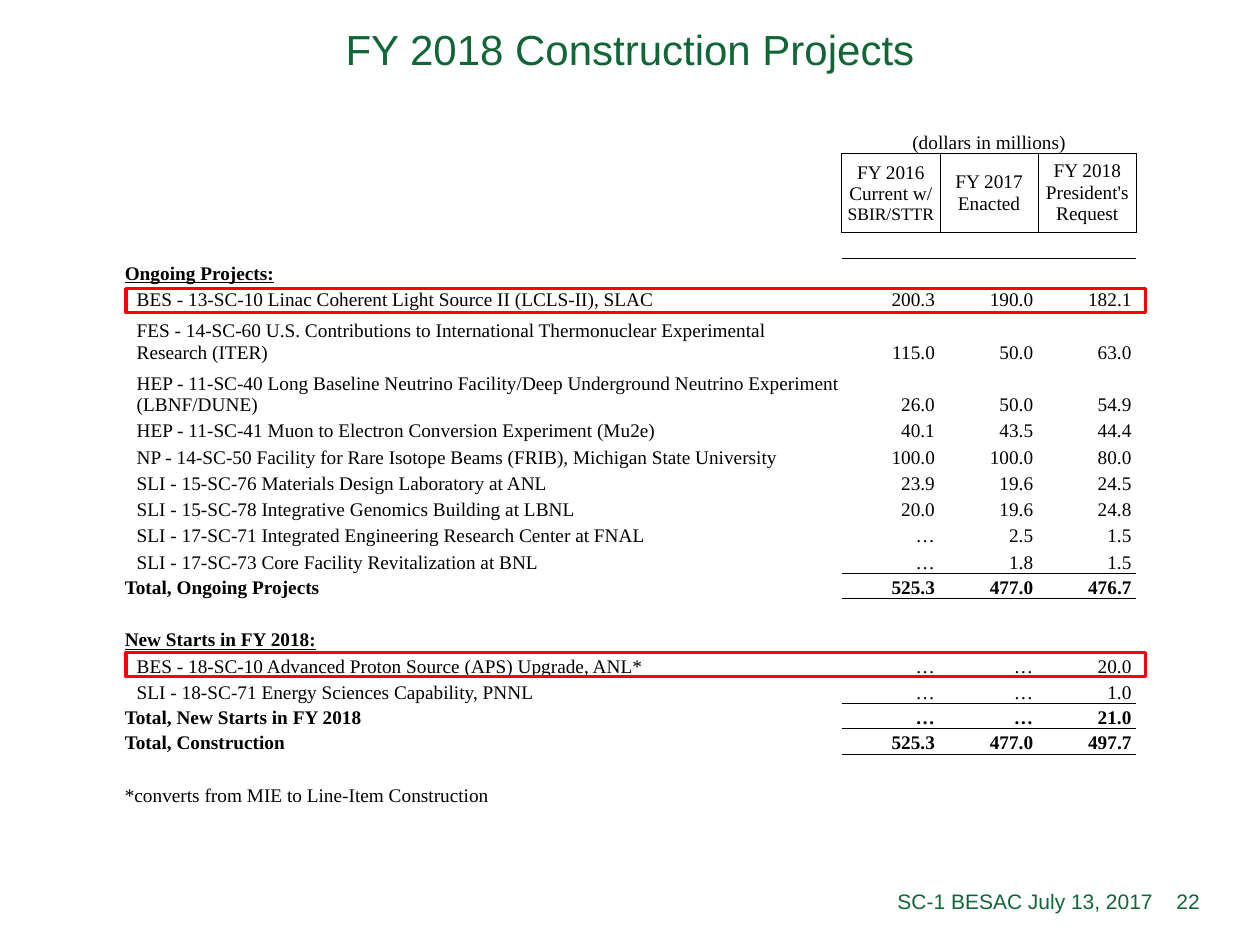
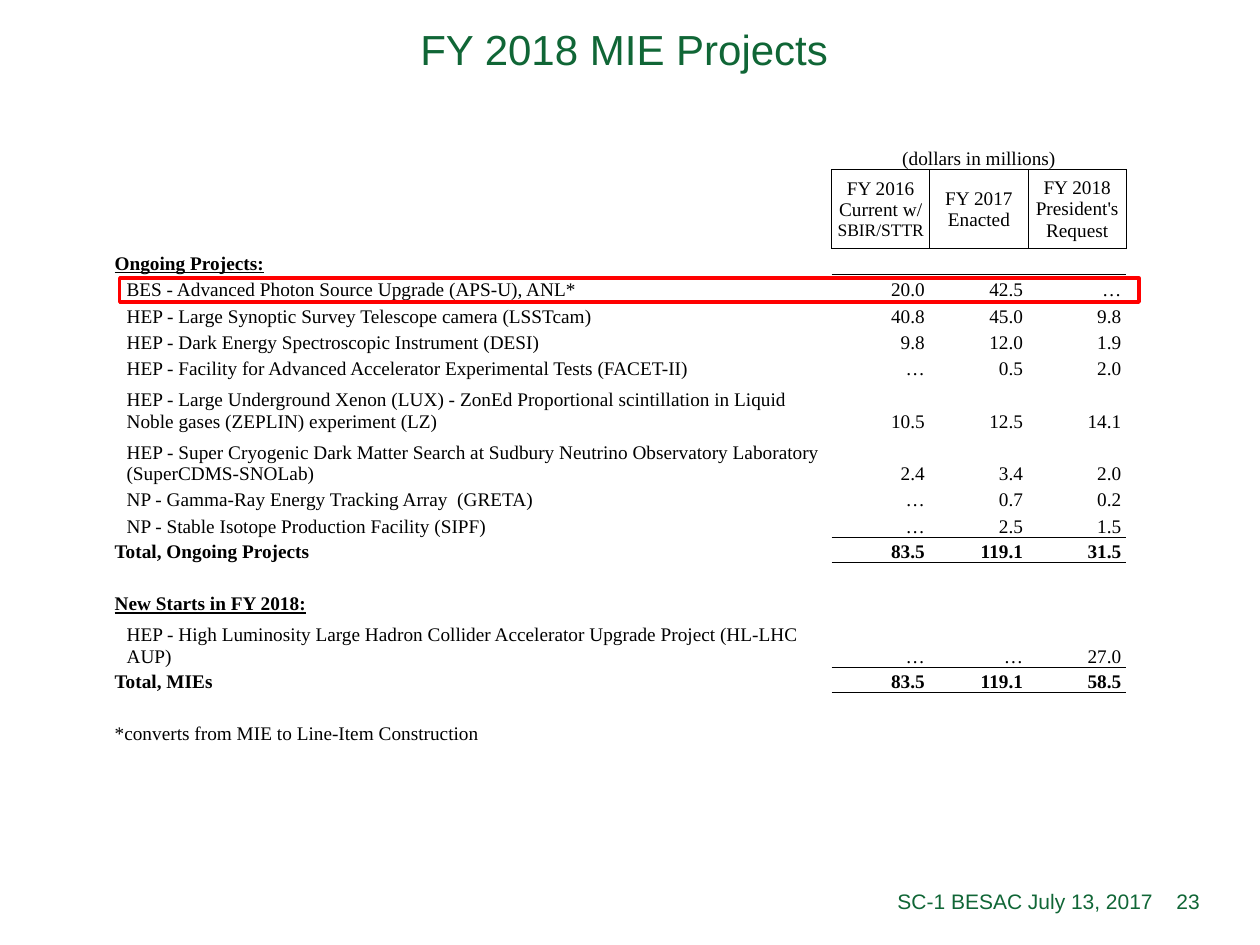
from dataclasses import dataclass

import lxml.etree
import pptx
import pptx.dml.color
import pptx.enum.shapes
import pptx.enum.text
import pptx.oxml.ns
import pptx.util

ALIGN = pptx.enum.text.PP_ALIGN
ANCHOR = pptx.enum.text.MSO_ANCHOR


@dataclass(frozen=True)
class Theme:
    green: str = "106636"
    black: str = "000000"
    red: str = "FF0000"
    sans: str = "Arial"
    serif: str = "Times New Roman"
    title_size: int = 24
    footer_size: int = 12
    table_size: int = 11
    small_size: int = 10
    rule_width: float = 0.5
    highlight_width: float = 2
    table_style: str = "{2D5ABB26-0587-4C30-8999-92F81FD0307C}"


class Report:
    GRID_COLUMNS = 100
    GRID_ROWS = 36
    LABEL_COLUMNS = 56.9
    VALUE_COLUMNS = 7.8
    TOTAL_ROWS = 0.96

    def __init__(self, theme):
        self.theme = theme
        self.deck = pptx.Presentation()
        self.deck.slide_width = pptx.util.Inches(10)
        self.deck.slide_height = pptx.util.Inches(7.5)
        self.page = None

    def across(self, columns):
        return round(self.deck.slide_width * columns / self.GRID_COLUMNS)

    def down(self, rows):
        return round(self.deck.slide_height * rows / self.GRID_ROWS)

    def place(self, left, top, width, height):
        return self.across(left), self.down(top), self.across(width), self.down(height)

    def style(self, para, name, size, color, align, bold=False, underline=False):
        para.alignment = align
        font = para.font
        font.name = name
        font.size = pptx.util.Pt(size)
        font.color.rgb = pptx.dml.color.RGBColor.from_string(color)
        font.bold = bold
        font.underline = underline

    def add_text(self, text, area, size, align):
        box = self.page.shapes.add_textbox(*self.place(*area))
        frame = box.text_frame
        frame.word_wrap = True
        frame.vertical_anchor = ANCHOR.MIDDLE
        para = frame.paragraphs[0]
        para.text = text
        self.style(para, self.theme.sans, size, self.theme.green, align)

    def add_page(self, title, number):
        self.page = self.deck.slides.add_slide(self.deck.slide_layouts[6])
        theme = self.theme
        self.add_text(title, (0, -1.15, 100, 6), theme.title_size, ALIGN.CENTER)
        self.add_text(str(number), (92, 33.36, 4.2, 1.92), theme.footer_size, ALIGN.RIGHT)
        self.add_text("SC-1 BESAC July 13, 2017", (34.2, 33.36, 58.3, 1.92),
                      theme.footer_size, ALIGN.RIGHT)

    def add_highlight(self, left, top):
        box = self.page.shapes.add_shape(
            pptx.enum.shapes.MSO_SHAPE.RECTANGLE, *self.place(left, top, 80.9, 0.91))
        box.shadow.inherit = False
        box.fill.background()
        box.line.color.rgb = pptx.dml.color.RGBColor.from_string(self.theme.red)
        box.line.width = pptx.util.Pt(self.theme.highlight_width)

    def add_borders(self, cell, sides):
        properties = cell._tc.get_or_add_tcPr()
        qualify = pptx.oxml.ns.qn
        for side in sides:
            line = lxml.etree.SubElement(properties, qualify(f"a:ln{side}"),
                                         w=str(pptx.util.Pt(self.theme.rule_width)))
            fill = lxml.etree.SubElement(line, qualify("a:solidFill"))
            lxml.etree.SubElement(fill, qualify("a:srgbClr"), val=self.theme.black)

    def fill_cell(self, cell, text="", align=ALIGN.LEFT, anchor=ANCHOR.BOTTOM,
                  indent=0, end=0, borders="", **emphasis):
        cell.margin_left = self.across(indent)
        cell.margin_right = self.across(end)
        cell.margin_top = cell.margin_bottom = 0
        cell.vertical_anchor = anchor
        self.add_borders(cell, borders)
        cell.fill.background()
        para = cell.text_frame.paragraphs[0]
        theme = self.theme
        if text:
            para.text = text
        else:
            para._p.get_or_add_endParaRPr().set("sz", str(theme.table_size * 100))
        self.style(para, theme.serif, theme.table_size, theme.black, align, **emphasis)

    def add_header(self, table):
        for cell in table.rows[0].cells:
            self.fill_cell(cell)
        units = table.cell(0, 1)
        units.merge(table.cell(0, 3))
        self.fill_cell(units, "(dollars in millions)", ALIGN.CENTER)
        self.fill_cell(table.cell(1, 0))
        years = ("FY 2016\nCurrent w/ ", "FY 2017 Enacted", "FY 2018 President's Request")
        for column, year in enumerate(years, 1):
            self.fill_cell(table.cell(1, column), year, ALIGN.CENTER, ANCHOR.MIDDLE,
                           borders="LRTB")
        span = table.cell(1, 1).text_frame.paragraphs[0].add_run()
        span.text = "SBIR/STTR"
        span.font.size = pptx.util.Pt(theme_size := self.theme.small_size)

    def add_budget(self, left, top, entries):
        heights = [1, 3] + [self.TOTAL_ROWS if kind == "total" else 2 if kind == "tall" else 1
                            for kind, *_ in entries]
        widths = [self.LABEL_COLUMNS] + [self.VALUE_COLUMNS] * 3
        frame = self.page.shapes.add_table(
            len(heights), len(widths), *self.place(left, top, sum(widths), sum(heights)))
        table = frame.table
        table.first_row = table.horz_banding = False
        table._tbl.tblPr.find(pptx.oxml.ns.qn("a:tableStyleId")).text = self.theme.table_style
        for column, width in zip(table.columns, widths):
            column.width = self.across(width)
        for row, height in zip(table.rows, heights):
            row.height = self.down(height)
        self.add_header(table)
        for row, (kind, label, *values) in enumerate(entries, 2):
            strong = kind in ("heading", "total")
            self.fill_cell(table.cell(row, 0), label,
                           indent=0.95 if kind in ("item", "tall") else 0,
                           bold=strong, underline=kind == "heading")
            for column, value in enumerate(values or [""] * 3, 1):
                self.fill_cell(table.cell(row, column), value, ALIGN.RIGHT, end=0.4,
                               borders="T" if kind == "total" or row == 2 else "",
                               bold=strong)


BLANK = ("blank", "")
ONGOING = ("heading", "Ongoing Projects:")
NEW_STARTS = ("heading", "New Starts in FY 2018:")
FOOTNOTE = ("note", "*converts from MIE to Line-Item Construction")

CONSTRUCTION = [
    BLANK,
    ONGOING,
    ("item", "BES - 13-SC-10 Linac Coherent Light Source II (LCLS-II), SLAC",
     "200.3", "190.0", "182.1"),
    ("tall", "FES - 14-SC-60 U.S. Contributions to International Thermonuclear Experimental "
     "Research (ITER)", "115.0", "50.0", "63.0"),
    ("tall", "HEP - 11-SC-40 Long Baseline Neutrino Facility/Deep Underground Neutrino "
     "Experiment (LBNF/DUNE)", "26.0", "50.0", "54.9"),
    ("item", "HEP - 11-SC-41 Muon to Electron Conversion Experiment (Mu2e)",
     "40.1", "43.5", "44.4"),
    ("item", "NP - 14-SC-50 Facility for Rare Isotope Beams (FRIB), Michigan State University",
     "100.0", "100.0", "80.0"),
    ("item", "SLI - 15-SC-76 Materials Design Laboratory at ANL", "23.9", "19.6", "24.5"),
    ("item", "SLI - 15-SC-78 Integrative Genomics Building at LBNL", "20.0", "19.6", "24.8"),
    ("item", "SLI - 17-SC-71 Integrated Engineering Research Center at FNAL",
     "…", "2.5", "1.5"),
    ("item", "SLI - 17-SC-73 Core Facility Revitalization at BNL", "…", "1.8", "1.5"),
    ("total", "Total, Ongoing Projects", "525.3", "477.0", "476.7"),
    BLANK,
    NEW_STARTS,
    ("item", "BES - 18-SC-10 Advanced Proton Source (APS) Upgrade, ANL*", "…", "…", "20.0"),
    ("item", "SLI - 18-SC-71 Energy Sciences Capability, PNNL", "…", "…", "1.0"),
    ("total", "Total, New Starts in FY 2018", "…", "…", "21.0"),
    ("total", "Total, Construction", "525.3", "477.0", "497.7"),
    BLANK,
    FOOTNOTE,
]

EQUIPMENT = [
    ONGOING,
    ("item", "BES - Advanced Photon Source Upgrade (APS-U), ANL*", "20.0", "42.5", "…"),
    ("item", "HEP - Large Synoptic Survey Telescope camera (LSSTcam)", "40.8", "45.0", "9.8"),
    ("item", "HEP - Dark Energy Spectroscopic Instrument (DESI)", "9.8", "12.0", "1.9"),
    ("item", "HEP - Facility for Advanced Accelerator Experimental Tests (FACET-II)",
     "…", "0.5", "2.0"),
    ("tall", "HEP - Large Underground Xenon (LUX) - ZonEd Proportional scintillation in Liquid "
     "Noble gases (ZEPLIN) experiment (LZ)", "10.5", "12.5", "14.1"),
    ("tall", "HEP - Super Cryogenic Dark Matter Search at Sudbury Neutrino Observatory "
     "Laboratory (SuperCDMS-SNOLab)", "2.4", "3.4", "2.0"),
    ("item", "NP - Gamma-Ray Energy Tracking Array  (GRETA)", "…", "0.7", "0.2"),
    ("item", "NP - Stable Isotope Production Facility (SIPF)", "…", "2.5", "1.5"),
    ("total", "Total, Ongoing Projects", "83.5", "119.1", "31.5"),
    BLANK,
    NEW_STARTS,
    ("tall", "HEP - High Luminosity Large Hadron Collider Accelerator Upgrade Project "
     "(HL-LHC AUP)", "…", "…", "27.0"),
    ("total", "Total, MIEs", "83.5", "119.1", "58.5"),
    BLANK,
    FOOTNOTE,
]


def main():
    report = Report(Theme())

    report.add_page("FY 2018 Construction Projects", 22)
    report.add_budget(9.9, 4.85, CONSTRUCTION)
    report.add_highlight(10, 11)
    report.add_highlight(10, 24.86)

    report.add_page("FY 2018 MIE Projects ", 23)
    report.add_budget(9.1, 5.47, EQUIPMENT)
    report.add_highlight(9.5, 10.6)

    report.deck.save("out.pptx")


if __name__ == "__main__":
    main()
